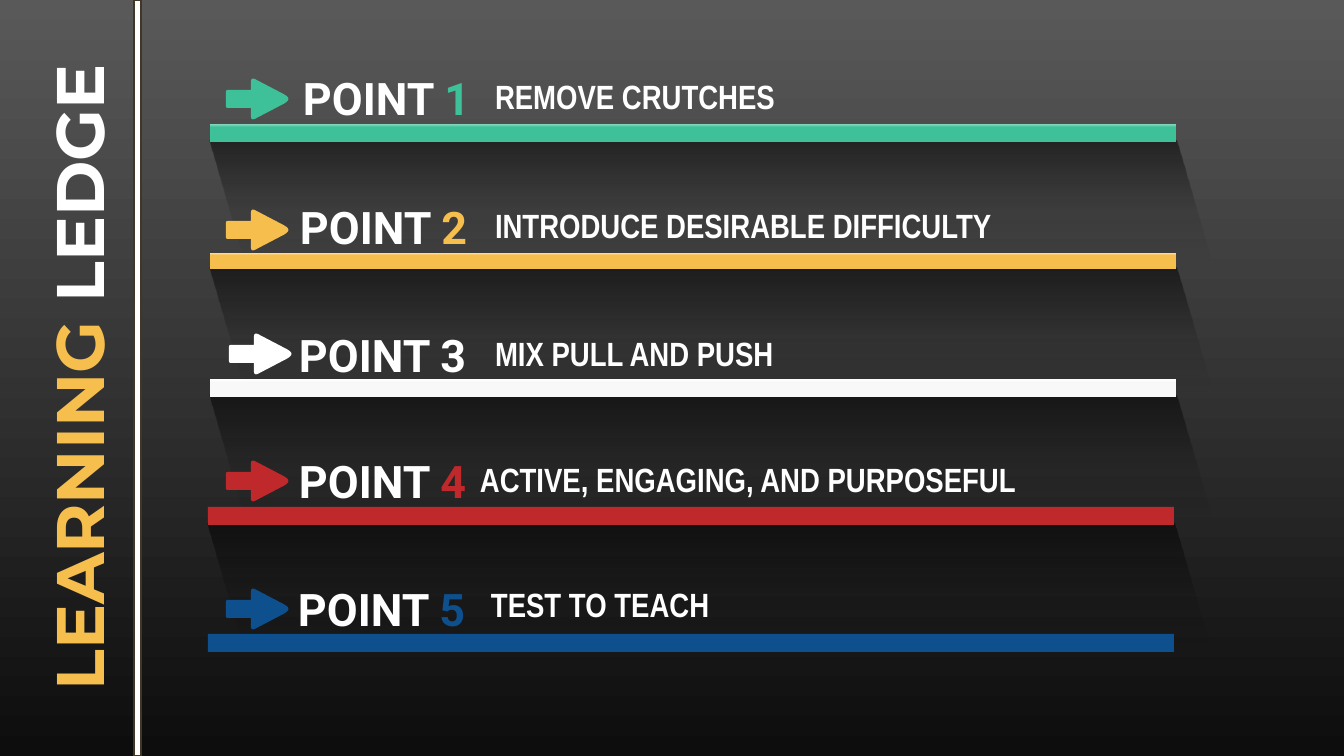
from collections import namedtuple
from dataclasses import dataclass

from pptx import Presentation
from pptx.dml.color import RGBColor as RGB
from pptx.enum.shapes import MSO_SHAPE as Shape
from pptx.enum.text import MSO_ANCHOR as Anchor, MSO_AUTO_SIZE as Fit, PP_ALIGN as Align
from pptx.oxml import parse_xml
from pptx.oxml.ns import nsdecls
from pptx.util import Emu, Pt

SCALE = 914400 / 134.4
Row = namedtuple("Row", "hue tint bar tall arrow label cap text")


@dataclass(frozen=True)
class Theme:
    """Colours, fonts and type sizes of the slide."""
    white: str = "FFFFFF"
    snow: str = "F8F8F8"
    green: str = "3EC098"
    gold: str = "F6BE4D"
    red: str = "BF292B"
    blue: str = "0D508D"
    edge: str = "403727"
    back: tuple = ((0, "595959", 100), (100, "0D0D0D", 100))
    shade: tuple = ((0, "000000", 53), (41, "000000", 10), (71, "000000", 0))
    head: tuple = ("Montserrat", 36)
    point: tuple = ("Roboto", 24)
    note: tuple = ("Arial Narrow", 18)


T = Theme()
ROWS = (
    Row(T.green, (("8BDAC1", 0), (T.green, 19)), (210, 124), 18, (226, 78),
        (293, 66), (485, 71), "REMOVE CRUTCHES"),
    Row(T.gold, (("FBE5B8", 0), (T.gold, 14)), (210, 253), 16, (226, 209),
        (290, 195), (485, 200), "INTRODUCE DESIRABLE DIFFICULTY"),
    Row(T.white, ((T.white, 0), (T.snow, 21)), (210, 379), 18, (229, 333),
        (289, 323), (485, 328), "MIX PULL AND PUSH"),
    Row(T.red, (), (208, 507), 18, (226, 460),
        (289, 449), (470, 454), "ACTIVE, ENGAGING, AND PURPOSEFUL"),
    Row(T.blue, (), (208, 634), 18, (226, 588),
        (288, 577), (481, 579), "TEST TO TEACH"),
)
ARROW = ((0, 12, 2), (25, 12, 0), (25, -1, 5), (67, 21, 10),
         (25, 43, 5), (25, 30, 0), (0, 30, 2))


def px(n):
    """Turn px into EMU."""
    return Emu(round(n * SCALE))


def blend(host, stops):
    """Swap the solid fill in an element for a vertical gradient."""
    marks = "".join(
        f'<a:gs pos="{pos * 1000}"><a:srgbClr val="{hue}">'
        f'<a:alpha val="{alpha * 1000}"/></a:srgbClr></a:gs>'
        for pos, hue, alpha in stops)
    grad = parse_xml(f'<a:gradFill {nsdecls("a")} rotWithShape="1"><a:gsLst>{marks}'
                     '</a:gsLst><a:lin ang="5400000" scaled="0"/></a:gradFill>')
    old = host.xpath("./a:solidFill")[0]
    host.replace(old, grad)


def paint(shape, hue, stops=()):
    """Fill a shape and clear its line and shadow."""
    shape.shadow.inherit = False
    shape.line.fill.background()
    shape.fill.solid()
    shape.fill.fore_color.rgb = RGB.from_string(hue)
    if stops:
        blend(shape.element.spPr, stops)


def block(slide, x, y, w, h, hue, stops=()):
    """Add a plain rectangle."""
    box = slide.shapes.add_shape(Shape.RECTANGLE, px(x), px(y), px(w), px(h))
    paint(box, hue, stops)
    return box


def shape_of(slide, dots):
    """Add a closed outline through px points."""
    first, *rest = dots
    pen = slide.shapes.build_freeform(round(first[0] * 100), round(first[1] * 100), SCALE / 100)
    pen.add_line_segments([(round(x * 100), round(y * 100)) for x, y in rest], close=True)
    return pen.convert_to_shape()


def bend(nodes):
    """Round each corner of a polygon by its own cut length."""
    dots = []
    for i, (x, y, cut) in enumerate(nodes):
        ends = []
        for u, v, _ in (nodes[i - 1], nodes[(i + 1) % len(nodes)]):
            part = cut / ((u - x) ** 2 + (v - y) ** 2) ** 0.5
            ends.append((x + (u - x) * part, y + (v - y) * part))
        (a, b), (c, d) = ends
        for t in [k / 6 for k in range(7)] if cut else [0]:
            p, q, r = (1 - t) ** 2, 2 * t * (1 - t), t * t
            dots.append((p * a + q * x + r * c, p * b + q * y + r * d))
    return dots


def arrow(slide, x, y, hue):
    """Add a soft-cornered arrow."""
    paint(shape_of(slide, [(x + u, y + v) for u, v in bend(ARROW)]), hue)


def shade(slide, x, y):
    """Add the slanted shadow under a bar."""
    dots = (x, y), (x + 966, y), (x + 1015, y + 168), (x + 49, y + 168)
    paint(shape_of(slide, dots), "000000", T.shade)


def write(box, runs, style, align=Align.LEFT):
    """Set the frame of a box and add its runs."""
    frame = box.text_frame
    frame.word_wrap = True
    frame.auto_size = Fit.SHAPE_TO_FIT_TEXT
    frame.vertical_anchor = Anchor.TOP
    frame.margin_left = frame.margin_right = px(10)
    frame.margin_top = frame.margin_bottom = px(5)
    para = frame.paragraphs[0]
    para.alignment = align
    for text, hue in runs:
        run = para.add_run()
        run.text = text
        run.font.name, size = style
        run.font.size = Pt(size)
        run.font.bold = True
        run.font.color.rgb = RGB.from_string(hue)


def label(slide, spot, w, h, runs, style):
    """Add a text box."""
    x, y = spot
    write(slide.shapes.add_textbox(px(x), px(y), px(w), px(h)), runs, style)


def title(slide):
    """Turn the title upright along the left edge."""
    box = slide.shapes.title
    box.left, box.top, box.width, box.height = px(-300), px(332), px(756), px(91)
    box.rotation = 270
    write(box, (("LEARNING ", T.gold), ("LEDGE", T.white)), T.head, Align.CENTER)


def point(slide, num, row):
    """Add one point with its bar, arrow and texts."""
    stops = [(pos, hue, 100) for hue, pos in row.tint]
    block(slide, *row.bar, 966, row.tall, row.hue, stops)
    arrow(slide, *row.arrow, row.hue)
    label(slide, row.label, 220, 65, (("POINT ", T.white), (str(num), row.hue)), T.point)
    label(slide, row.cap, 793, 51, ((row.text, T.white),), T.note)


def main():
    """Build and save the slide."""
    deck = Presentation()
    deck.slide_width, deck.slide_height = px(1344), px(756)
    slide = deck.slides.add_slide(deck.slide_layouts[5])
    fill = slide.background.fill
    fill.solid()
    fill.fore_color.rgb = RGB.from_string(T.back[0][1])
    blend(slide.element.xpath(".//p:bgPr")[0], T.back)
    title(slide)
    for row in ROWS[:-1]:
        x, y = row.bar
        shade(slide, x, y + row.tall - 1)
    for num, row in enumerate(ROWS, 1):
        point(slide, num, row)
    rule = block(slide, 134, 0, 7, 756, T.white)
    rule.line.color.rgb = RGB.from_string(T.edge)
    rule.line.width = Pt(1)
    deck.save("out.pptx")


if __name__ == "__main__":
    main()
